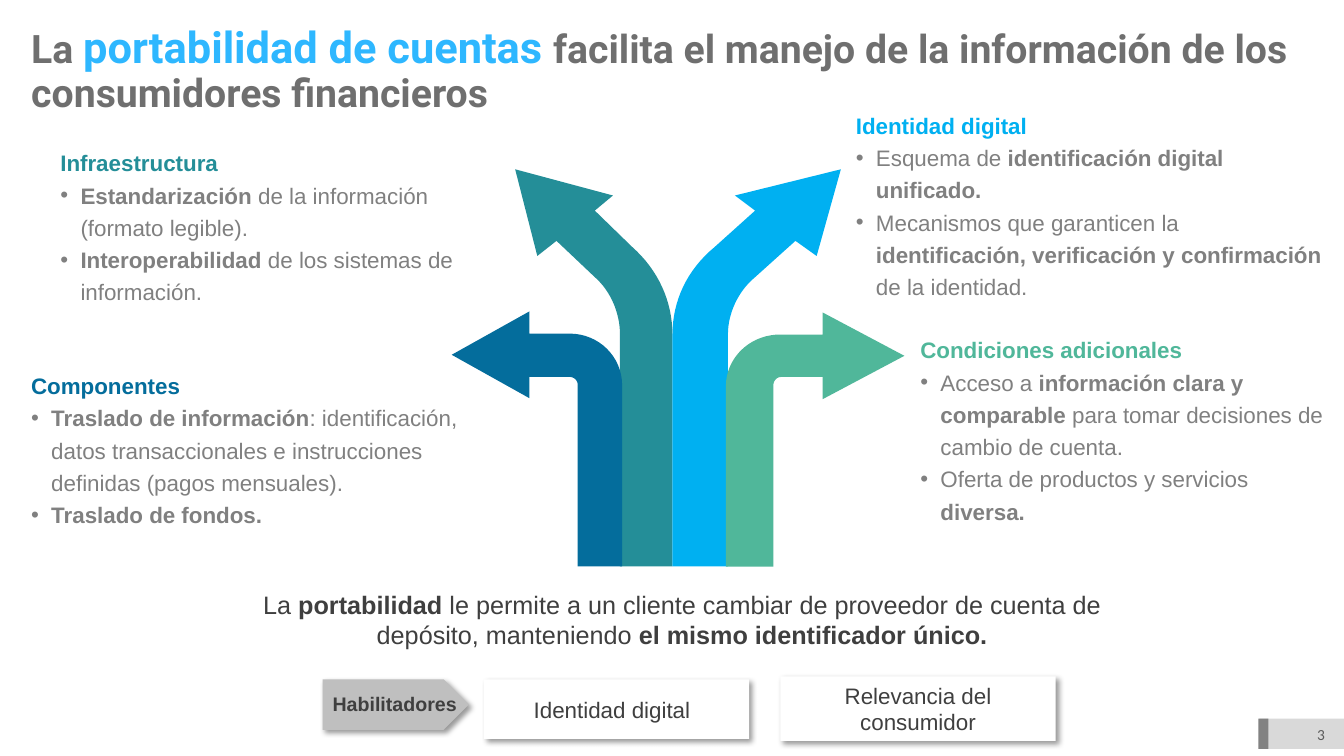
from dataclasses import dataclass

from lxml.etree import SubElement
from pptx import Presentation
from pptx.dml.color import RGBColor
from pptx.enum.shapes import MSO_SHAPE
from pptx.enum.text import MSO_ANCHOR, MSO_AUTO_SIZE, PP_ALIGN
from pptx.oxml.ns import qn
from pptx.util import Inches, Pt


@dataclass(frozen=True)
class Theme:
    teal: str = "248E98"
    navy: str = "046D9C"
    sky: str = "00B0F1"
    green: str = "50B79A"
    title_gray: str = "6F6F6F"
    title_blue: str = "2EB7FF"
    body_gray: str = "808080"
    dark: str = "3F3F3F"
    number_gray: str = "5C5C5C"
    silver: str = "BFBFBF"
    light: str = "D9D9D9"
    accent: str = "828282"
    white: str = "FFFFFF"
    text_font: str = "Arial"
    title_font: str = "Roboto"
    number_font: str = "Calibri"
    title_size: int = 28
    highlight_size: int = 31
    message_size: int = 18
    body_size: int = 16
    label_size: int = 14
    number_size: int = 11


def bezier(start, curve, steps=16):
    control_1, control_2, end = curve[:2], curve[2:4], curve[4:]
    for step in range(1, steps + 1):
        t = step / steps
        u = 1 - t
        yield tuple(
            u**3 * a + 3 * u * u * t * b + 3 * u * t * t * c + t**3 * d
            for a, b, c, d in zip(start, control_1, control_2, end)
        )


class SlideBuilder:
    def __init__(self, slide, theme):
        self.slide = slide
        self.theme = theme

    def apply(self, target, values):
        for name, value in values.items():
            setattr(target, name, value)

    def run(self, paragraph, words, size, color, bold=False, font=None):
        run = paragraph.add_run()
        run.text = words
        name = font or self.theme.text_font
        self.apply(run.font, {"name": name, "size": Pt(size), "bold": bold})
        run.font.color.rgb = RGBColor.from_string(color)

    def marked(self, paragraph, words, size, color):
        for index, part in enumerate(words.split("*")):
            if part:
                self.run(paragraph, part, size, color, bold=index % 2 == 1)

    def frame(self, shape, anchor=MSO_ANCHOR.TOP):
        self.apply(shape.text_frame, {
            "word_wrap": True,
            "auto_size": MSO_AUTO_SIZE.NONE,
            "vertical_anchor": anchor,
        })
        return shape.text_frame

    def title(self, place, parts):
        heading = self.slide.shapes.title
        edges = ("left", "top", "width", "height")
        self.apply(heading, dict(zip(edges, map(Inches, place))))
        paragraph = self.frame(heading, MSO_ANCHOR.MIDDLE).paragraphs[0]
        self.apply(paragraph, {"alignment": PP_ALIGN.LEFT, "line_spacing": 0.9})
        for words, size, color in parts:
            self.run(paragraph, words, size, color, True, self.theme.title_font)

    def textbox(self, place, anchor=MSO_ANCHOR.TOP):
        box = self.slide.shapes.add_textbox(*map(Inches, place))
        return self.frame(box, anchor)

    def line(self, place, words, size, color, align=PP_ALIGN.CENTER, anchor=MSO_ANCHOR.TOP):
        paragraph = self.textbox(place, anchor).paragraphs[0]
        paragraph.alignment = align
        self.marked(paragraph, words, size, color)

    def number(self, place, words):
        paragraph = self.textbox(place, MSO_ANCHOR.MIDDLE).paragraphs[0]
        paragraph.alignment = PP_ALIGN.RIGHT
        theme = self.theme
        self.run(paragraph, words, theme.number_size, theme.number_gray, font=theme.number_font)

    def topic(self, place, heading, color, bullets, anchor=MSO_ANCHOR.TOP):
        frame = self.textbox(place, anchor)
        first = frame.paragraphs[0]
        first.line_spacing = 1.2
        self.run(first, heading, self.theme.body_size, color, bold=True)
        for words in bullets:
            paragraph = frame.add_paragraph()
            paragraph.line_spacing = 1.2
            properties = paragraph._p.get_or_add_pPr()
            properties.set("marL", str(Inches(0.2)))
            properties.set("indent", str(-Inches(0.2)))
            SubElement(properties, qn("a:buFont"), typeface=self.theme.text_font)
            SubElement(properties, qn("a:buChar"), char="•")
            self.marked(paragraph, words, self.theme.body_size, self.theme.body_gray)

    def paint(self, shape, color):
        shape.shadow.inherit = False
        shape.fill.solid()
        shape.fill.fore_color.rgb = RGBColor.from_string(color)
        shape.line.fill.background()

    def block(self, kind, place, color, shadow=False):
        shape = self.slide.shapes.add_shape(kind, *map(Inches, place))
        self.paint(shape, color)
        if shadow:
            effects = shape._element.spPr.find(qn("a:effectLst"))
            outer = SubElement(effects, qn("a:outerShdw"), blurRad=str(Pt(4)), dist=str(Pt(3)),
                               dir=str(45 * 60000), algn="tl", rotWithShape="0")
            black = SubElement(outer, qn("a:srgbClr"), val="000000")
            SubElement(black, qn("a:alpha"), val="40000")
        return shape

    def arrow(self, outline, color):
        points = [outline[0]]
        for step in outline[1:]:
            points.extend([step] if len(step) == 2 else bezier(points[-1], step))
        start, *rest = [(Inches(x), Inches(y)) for x, y in points]
        builder = self.slide.shapes.build_freeform(*start)
        builder.add_line_segments(rest, close=True)
        self.paint(builder.convert_to_shape(), color)


def main():
    theme = Theme()
    deck = Presentation()
    deck.slide_width, deck.slide_height = Inches(13.33), Inches(7.5)
    page = SlideBuilder(deck.slides.add_slide(deck.slide_layouts[5]), theme)

    page.block(MSO_SHAPE.RECTANGLE, (12.49, 7.13, 0.84, 0.3), theme.light)
    page.block(MSO_SHAPE.RECTANGLE, (12.48, 7.13, 0.1, 0.3), theme.accent)
    page.number((12.53, 7.09, 0.71, 0.4), "3")
    page.title((0.21, 0.02, 13.12, 1.37), [
        ("La ", theme.title_size, theme.title_gray),
        ("portabilidad de cuentas ", theme.highlight_size, theme.title_blue),
        ("facilita el manejo de la información de los consumidores financieros",
         theme.title_size, theme.title_gray),
    ])

    page.topic((0.5, 1.38, 4.51, 1.69), "Infraestructura", theme.teal, [
        "*Estandarización* de la información (formato legible).",
        "*Interoperabilidad* de los sistemas de información.",
    ])
    page.topic((0.21, 3.59, 4.55, 1.69), "Componentes", theme.navy, [
        "*Traslado de información*: identificación, datos transaccionales e instrucciones "
        "definidas (pagos mensuales).",
        "*Traslado de fondos.*",
    ])
    page.topic((8.39, 1.01, 4.93, 2.01), "Identidad digital", theme.sky, [
        "Esquema de *identificación digital unificado.*",
        "Mecanismos que garanticen la *identificación, verificación y confirmación* "
        "de la identidad.",
    ])
    page.topic((9.03, 3.24, 4.27, 2.01), "Condiciones adicionales", theme.green, [
        "Acceso a *información clara y comparable* para tomar decisiones de cambio de cuenta.",
        "Oferta de productos y servicios *diversa.*",
    ], MSO_ANCHOR.MIDDLE)

    base = 5.62
    page.arrow([
        (5.11, 1.68), (6.08, 1.94), (5.9, 2.09), (6.27, 2.45),
        (6.53, 2.68, 6.67, 2.99, 6.67, 3.32), (6.67, base), (6.15, base), (6.15, 3.32),
        (6.15, 3.11, 6.06, 2.89, 5.9, 2.75), (5.52, 2.39), (5.33, 2.54),
    ], theme.teal)
    page.arrow([
        (8.34, 1.68), (7.29, 1.94), (7.49, 2.09), (7.09, 2.45),
        (6.81, 2.68, 6.67, 2.99, 6.67, 3.32), (6.67, base), (7.22, base), (7.22, 3.32),
        (7.22, 3.11, 7.32, 2.89, 7.49, 2.75), (7.89, 2.39), (8.1, 2.54),
    ], theme.sky)
    page.arrow([
        (8.97, 3.53), (8.16, 3.1), (8.16, 3.32), (7.7, 3.32),
        (7.41, 3.34, 7.2, 3.57, 7.2, 3.83), (7.2, base), (7.67, base), (7.67, 3.83),
        (7.67, 3.78, 7.7, 3.74, 7.75, 3.74), (8.16, 3.74), (8.16, 3.96),
    ], theme.green)
    page.arrow([
        (4.48, 3.52), (5.25, 3.09), (5.25, 3.31), (5.65, 3.31),
        (5.94, 3.31, 6.17, 3.54, 6.17, 3.82), (6.17, base), (5.73, base), (5.73, 3.82),
        (5.73, 3.77, 5.69, 3.74, 5.65, 3.74), (5.25, 3.74), (5.25, 3.95),
    ], theme.navy)

    page.line((2.02, 5.79, 9.49, 0.71),
              "La *portabilidad* le permite a un cliente cambiar de proveedor de cuenta de "
              "depósito, manteniendo *el mismo identificador único.*",
              theme.message_size, theme.dark, anchor=MSO_ANCHOR.MIDDLE)
    page.block(MSO_SHAPE.PENTAGON, (3.2, 6.74, 1.45, 0.5), theme.silver, shadow=True)
    page.line((3.2, 6.82, 1.56, 0.34), "*Habilitadores*", theme.label_size, theme.dark,
              PP_ALIGN.LEFT)
    page.block(MSO_SHAPE.RECTANGLE, (4.8, 6.74, 2.63, 0.59), theme.white, shadow=True)
    page.line((5.05, 6.86, 2.04, 0.37), "Identidad digital", theme.body_size, theme.dark)
    relevance = page.block(MSO_SHAPE.RECTANGLE, (7.74, 6.71, 2.73, 0.64), theme.white, shadow=True)
    paragraph = page.frame(relevance, MSO_ANCHOR.MIDDLE).paragraphs[0]
    paragraph.alignment = PP_ALIGN.CENTER
    page.marked(paragraph, "Relevancia del consumidor", theme.body_size, theme.dark)

    deck.save("out.pptx")


if __name__ == "__main__":
    main()
